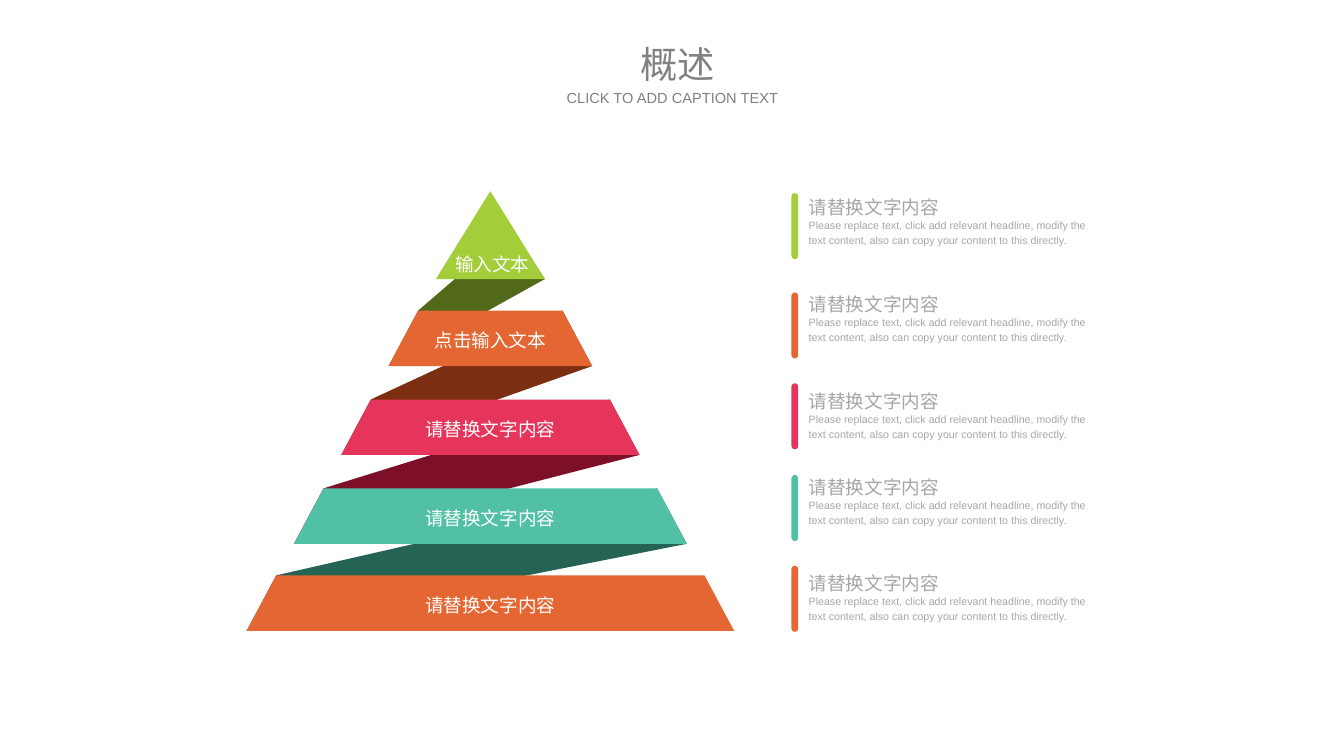
import pptx
import pptx.dml.color
import pptx.enum.shapes
import pptx.enum.text
import pptx.util

Inches = pptx.util.Inches
RGBColor = pptx.dml.color.RGBColor
SHAPE = pptx.enum.shapes.MSO_SHAPE
ALIGN = pptx.enum.text.PP_ALIGN
ANCHOR = pptx.enum.text.MSO_ANCHOR
AUTO_SIZE = pptx.enum.text.MSO_AUTO_SIZE

WHITE = RGBColor(0xFF, 0xFF, 0xFF)
TITLE_GRAY = RGBColor(0x80, 0x80, 0x80)
TEXT_GRAY = RGBColor(0xA6, 0xA6, 0xA6)
LIME = RGBColor(0xA3, 0xCD, 0x39)
ORANGE = RGBColor(0xE4, 0x66, 0x33)
PINK = RGBColor(0xE5, 0x35, 0x5B)
TEAL = RGBColor(0x52, 0xC0, 0xA5)
DARK_LIME = RGBColor(0x52, 0x69, 0x1A)
DARK_ORANGE = RGBColor(0x7B, 0x2F, 0x10)
DARK_PINK = RGBColor(0x7D, 0x10, 0x28)
DARK_TEAL = RGBColor(0x25, 0x64, 0x55)

CENTER = 5.13
APEX_TOP, APEX_BOTTOM = 2, 2.92
APEX_HALF, HALF_STEP = 0.57, 0.495
TIER_HEIGHT, TIER_SLANT = 0.58, 0.31
LABEL_HEIGHT = 0.47

HEADING = "请替换文字内容"
BODY = ("Please replace text, click add relevant headline, modify the text content, "
        "also can copy your content to this directly.")

# label, top, colour of each band below the apex
BANDS = [
    ("点击输入文本", 3.25, ORANGE),
    (HEADING, 4.18, PINK),
    (HEADING, 5.11, TEAL),
    (HEADING, 6.02, ORANGE),
]
RIBBON_COLORS = [DARK_LIME, DARK_ORANGE, DARK_PINK, DARK_TEAL]

# bar top, heading top, colour
NOTES = [
    (2.02, 2, LIME),
    (3.06, 3.02, ORANGE),
    (4.01, 4.03, PINK),
    (4.97, 4.93, TEAL),
    (5.92, 5.94, ORANGE),
]


def write_text(tf, text, size=14, color=WHITE, align=ALIGN.LEFT, spacing=None):
    p = tf.paragraphs[0]
    p.alignment = align
    p.line_spacing = spacing
    r = p.add_run()
    r.text = text
    r.font.name = "Arial"
    r.font.size = pptx.util.Pt(size)
    r.font.color.rgb = color


class Canvas:
    def __init__(self, slide):
        self.shapes = slide.shapes

    def paint(self, sp, color):
        sp.shadow.inherit = False
        sp.fill.solid()
        sp.fill.fore_color.rgb = color
        sp.line.fill.background()

    def polygon(self, points, color):
        start, *rest = [(Inches(x), Inches(y)) for x, y in points]
        builder = self.shapes.build_freeform(*start)
        builder.add_line_segments(rest, close=True)
        self.paint(builder.convert_to_shape(), color)

    def bar(self, left, top, color):
        sp = self.shapes.add_shape(SHAPE.ROUND_2_SAME_RECTANGLE, Inches(left), Inches(top),
                                   Inches(0.07), Inches(0.69))
        sp.adjustments[0] = sp.adjustments[1] = 0.5
        self.paint(sp, color)

    def text(self, left, top, width, height, text, wrap=True, grow=True,
             anchor=ANCHOR.TOP, **style):
        box = self.shapes.add_textbox(Inches(left), Inches(top), Inches(width), Inches(height))
        tf = box.text_frame
        tf.margin_left = tf.margin_top = tf.margin_right = tf.margin_bottom = 0
        tf.word_wrap = wrap
        tf.auto_size = AUTO_SIZE.SHAPE_TO_FIT_TEXT if grow else AUTO_SIZE.NONE
        tf.vertical_anchor = anchor
        write_text(tf, text, **style)

    def label(self, center, top, width, text):
        self.text(center - width / 2, top, width, LABEL_HEIGHT, text, grow=False,
                  anchor=ANCHOR.MIDDLE, align=ALIGN.CENTER, spacing=1.2)


def band_corners(top, half):
    """Corners in the order top left, bottom left, bottom right, top right."""
    bottom, inner = top + TIER_HEIGHT, half - TIER_SLANT
    return [(CENTER - inner, top), (CENTER - half, bottom),
            (CENTER + half, bottom), (CENTER + inner, top)]


def draw_pyramid(canvas):
    halves = [APEX_HALF + HALF_STEP * i for i in range(1, len(BANDS) + 1)]
    bands = [band_corners(top, half) for (_, top, _), half in zip(BANDS, halves)]

    # Each ribbon runs from the right side of one tier to the left side of the next
    right_sides = [[(CENTER + APEX_HALF, APEX_BOTTOM), (5.36, 2.4)]]
    right_sides += [corners[2:] for corners in bands]
    for right_side, lower, color in zip(right_sides, bands, RIBBON_COLORS):
        canvas.polygon(lower[:2] + right_side, color)

    canvas.polygon([(CENTER, APEX_TOP), (CENTER + APEX_HALF, APEX_BOTTOM),
                    (CENTER - APEX_HALF, APEX_BOTTOM)], LIME)
    canvas.label(CENTER + 0.02, 2.51, 2 * APEX_HALF, "输入文本")
    for (text, top, color), half, corners in zip(BANDS, halves, bands):
        canvas.polygon(corners, color)
        canvas.label(CENTER, top + 0.05, 2 * (half - TIER_SLANT), text)


def draw_notes(canvas):
    for bar_top, top, color in NOTES:
        canvas.bar(8.28, bar_top, color)
        canvas.text(8.46, top + 0.26, 2.95, 0.31, BODY, size=8, color=TEXT_GRAY, spacing=1.2)
        canvas.text(8.46, top, 1.37, 0.28, HEADING, wrap=False, color=TEXT_GRAY, spacing=1.2)


def main():
    prs = pptx.Presentation()
    prs.slide_width, prs.slide_height = Inches(14.06), Inches(7.91)
    canvas = Canvas(prs.slides.add_slide(prs.slide_layouts[6]))
    draw_pyramid(canvas)
    draw_notes(canvas)
    heading_style = dict(anchor=ANCHOR.MIDDLE, align=ALIGN.CENTER, color=TITLE_GRAY)
    canvas.text(5.82, 0.42, 2.53, 0.49, "概述", size=28, **heading_style)
    canvas.text(5.77, 0.93, 2.53, 0.19, "CLICK TO ADD CAPTION TEXT", size=11, **heading_style)
    prs.save("out.pptx")


if __name__ == "__main__":
    main()
